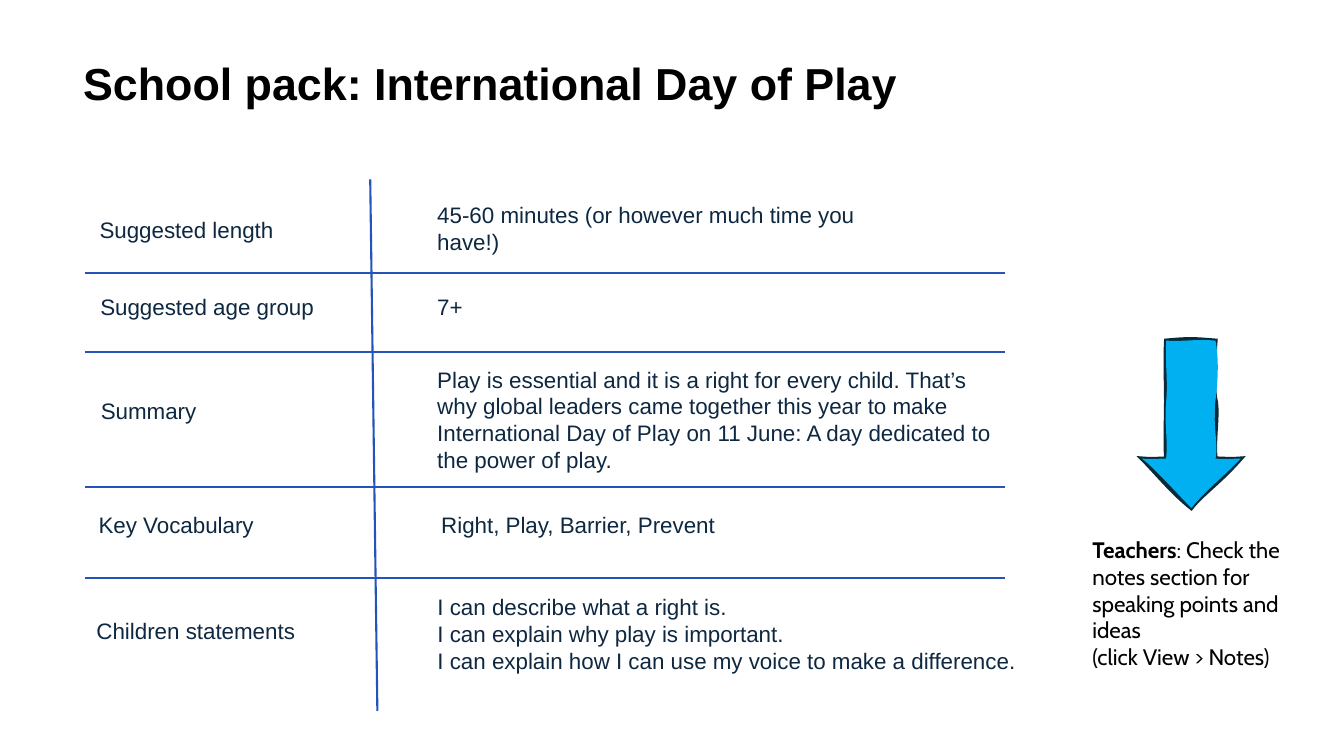
from lxml import etree
from pptx import Presentation, util as u
from pptx.dml.color import RGBColor
from pptx.enum import shapes, text
from pptx.oxml.ns import qn

COLORS = {"title": "000000", "body": "0E2841", "rule": "2653B9",
          "arrow": "00B0F0", "outline": "092A39"}
TITLE = {"name": "Arial", "size": u.Pt(32), "bold": True}
BODY = {"name": "Arial", "size": u.Pt(16), "bold": False}
NOTE = {"name": "Cabin", "size": u.Pt(16)}
FRAME = {"word_wrap": True, "auto_size": text.MSO_AUTO_SIZE.NONE,
         "vertical_anchor": text.MSO_ANCHOR.TOP}


def fill_text(sp, box, lines, fmt, color, align=text.PP_ALIGN.LEFT):
    """Place a text shape and write (text, extra format) runs, one list per paragraph."""
    for key, val in zip(("left", "top", "width", "height"), box):
        setattr(sp, key, u.Cm(val))
    tf = sp.text_frame
    for key, val in FRAME.items():
        setattr(tf, key, val)
    for i, line in enumerate(lines):
        p = tf.paragraphs[0] if i == 0 else tf.add_paragraph()
        p.alignment = align
        p.space_before = u.Pt(0)
        if sp.is_placeholder:
            pPr = p._p.get_or_add_pPr()
            pPr.set("marL", "0")
            pPr.set("indent", "0")
            etree.SubElement(pPr, qn("a:buNone"))
        for words, extra in line:
            r = p.add_run()
            r.text = words
            for key, val in {**fmt, **extra}.items():
                setattr(r.font, key, val)
            r.font.color.rgb = RGBColor.from_string(COLORS[color])
    return tf


prs = Presentation()
prs.slide_width, prs.slide_height = u.Cm(33.87), u.Cm(19.05)
s = prs.slides.add_slide(prs.slide_layouts[1])

# Title
tf = fill_text(s.shapes.title, (1.84, 1.07, 24.92, 3.18),
               [[("School pack: International Day of Play", {})]], TITLE, "title")
tf.vertical_anchor = text.MSO_ANCHOR.BOTTOM
tf.margin_bottom = u.Cm(1.46)
tf.paragraphs[0].line_spacing = 0.9

# Row labels: text, left, top, width
labels = [
    ("Suggested length", 2.02, 5.33, 5.36),
    ("Suggested age group", 1.12, 7.26, 8.2),
    ("Summary", 2.03, 9.88, 3.43),
    ("Key Vocabulary", 2.14, 12.76, 4.6),
    ("Children statements", 2.14, 15.42, 5.59),
]
for label, left, top, width in labels:
    fill_text(s.shapes.add_textbox(0, 0, 0, 0), (left, top, width, 1.63),
              [[(label, {})]], BODY, "body", text.PP_ALIGN.CENTER)

# Row values: text, box
values = [
    ("45-60 minutes (or however much time you have!)", (10.77, 4.95, 11.15, 2.31)),
    ("7+", (10.77, 7.26, 11.15, 1.63)),
    ("Play is essential and it is a right for every child. That’s why global "
     "leaders came together this year to make International Day of Play on "
     "11 June: A day dedicated to the power of play.", (10.77, 9.09, 14.94, 3.68)),
    ("Right, Play, Barrier, Prevent", (10.87, 12.76, 14.94, 1.63)),
]
for value, box in values:
    fill_text(s.shapes.add_textbox(0, 0, 0, 0), box, [[(value, {})]], BODY, "body")

# Children statements list
statements = ["I can describe what a right is.",
              "I can explain why play is important.",
              "I can explain how I can use my voice to make a difference."]
fill_text(s.placeholders[1], (10.77, 14.82, 15.42, 3),
          [[(statement, {})] for statement in statements], BODY, "body")

# Rules between the rows and columns
rules = [(9.33, 4.52, 9.51, 17.91)]
rules += [(2.13, y, 25.32, y) for y in (6.88, 8.86, 12.28, 14.57)]
for rule in rules:
    ln = s.shapes.add_connector(shapes.MSO_CONNECTOR.STRAIGHT, *map(u.Cm, rule))
    ln.line.color.rgb = RGBColor.from_string(COLORS["rule"])
    ln.line.width = u.Pt(1.5)
    etree.SubElement(ln._element.spPr, qn("a:effectLst"))

# Teacher note
fill_text(s.shapes.add_textbox(0, 0, 0, 0), (27.28, 13.38, 6.05, 3.68),
          [[("Teachers", {"bold": True}),
            (": Check the notes section for speaking points and ideas", {"bold": False})],
           [("(click View > Notes)", {"bold": False})]], NOTE, "title")

# Hand-drawn arrow: cubic curves from its left tip, on a grid of 1/100 inch
tip_x, tip_y, top_y = 1133, 455, 338
outline = [
    (1144, 456, 1151, 455, 1157, 455), (1156, 435, 1157, 414, 1157, 398),
    (1157, 382, 1156, 357, 1157, 338), (1179, 336, 1182, 336, 1206, 338),
    (1205, 352, 1203, 383, 1206, 397), (1209, 411, 1204, 435, 1206, 455),
    (1214, 455, 1219, 456, 1231, 455), (1210, 479, 1194, 489, 1182, 504),
    (1163, 489, 1146, 468, 1133, 455),
]
inside = [
    (1141, 456, 1150, 455, 1157, 455), (1159, 436, 1155, 421, 1157, 399),
    (1159, 377, 1156, 366, 1157, 338), (1179, 339, 1187, 336, 1206, 338),
    (1209, 354, 1209, 373, 1206, 397), (1203, 421, 1209, 441, 1206, 455),
    (1214, 456, 1225, 455, 1231, 455), (1215, 472, 1197, 486, 1182, 504),
    (1171, 493, 1145, 464, 1133, 455),
]
fb = s.shapes.build_freeform(tip_x, tip_y, scale=u.Cm(2.54) / 100)
fb.add_line_segments([curve[4:] for curve in outline], close=True)
sp = fb.convert_to_shape()
sp.shadow.inherit = False
sp.fill.solid()
sp.fill.fore_color.rgb = RGBColor.from_string(COLORS["arrow"])
sp.line.color.rgb = RGBColor.from_string(COLORS["outline"])
sp.line.width = u.Pt(3)
etree.SubElement(sp.line._get_or_add_ln(), qn("a:miter"), lim="800000")

# Curved paths: the stroke lies behind the fill
paths = sp._element.spPr.find(".//" + qn("a:pathLst"))
size = {key: paths[0].get(key) for key in ("w", "h")}
paths.remove(paths[0])
for curves, mode in ((outline, {"fill": "none"}), (inside, {"stroke": "0"})):
    sketch = etree.SubElement(paths, qn("a:path"), **size, **mode)
    for tag, nums in [("a:moveTo", (tip_x, tip_y))] + [("a:cubicBezTo", c) for c in curves]:
        step = etree.SubElement(sketch, qn(tag))
        for x, y in zip(nums[::2], nums[1::2]):
            etree.SubElement(step, qn("a:pt"), x=str(x - tip_x), y=str(y - top_y))
    etree.SubElement(sketch, qn("a:close"))

prs.save("out.pptx")
